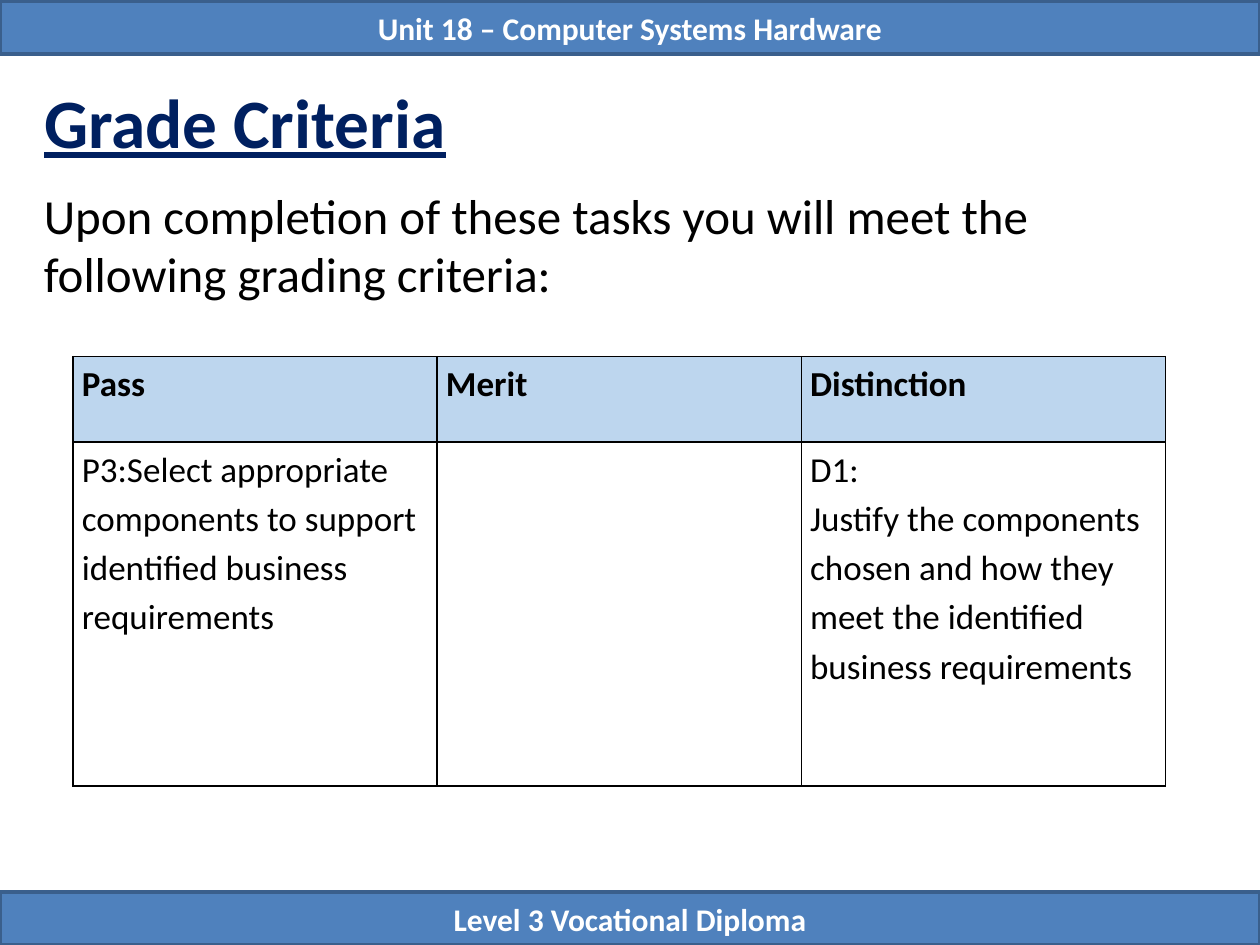
import pptx
import pptx.dml.color
import pptx.enum.shapes
import pptx.enum.text
import pptx.oxml
import pptx.oxml.ns
import pptx.util

Inches = pptx.util.Inches
Pt = pptx.util.Pt
ALIGN = pptx.enum.text.PP_ALIGN
MIDDLE = pptx.enum.text.MSO_ANCHOR.MIDDLE


def color(code):
    return pptx.dml.color.RGBColor.from_string(code)


def write(frame, text, size, ink="000000", bold=False, under=False,
          align=ALIGN.LEFT, space=None):
    """Fill the frame, one paragraph for each line of text."""
    frame.word_wrap = True
    frame.text = text
    for par in frame.paragraphs:
        par.alignment = align
        par.line_spacing = space
        for run in par.runs:
            font = run.font
            font.name = "Calibri"
            font.size = Pt(size)
            font.bold = bold
            font.underline = under
            font.color.rgb = color(ink)


def border(cell, ink="000000", width=1):
    props = cell._tc.get_or_add_tcPr()
    for index, side in enumerate(("lnL", "lnR", "lnT", "lnB")):
        props.insert(index, pptx.oxml.parse_xml(
            f'<a:{side} {pptx.oxml.ns.nsdecls("a")} w="{Pt(width)}">'
            f'<a:solidFill><a:srgbClr val="{ink}"/></a:solidFill></a:{side}>'))


class Deck:
    blue, edge, navy, pale = "4F81BD", "3A5F8C", "002060", "BDD6EE"

    def __init__(self):
        self.show = pptx.Presentation()
        self.show.slide_width = Inches(10)
        self.show.slide_height = Inches(7.5)
        self.slide = self.show.slides.add_slide(self.show.slide_layouts[5])
        self.shapes = self.slide.shapes

    def bar(self, text, top):
        rect = self.shapes.add_shape(
            pptx.enum.shapes.MSO_SHAPE.RECTANGLE,
            0, Inches(top), Inches(10), Inches(0.42))
        rect.shadow.inherit = False
        rect.fill.solid()
        rect.fill.fore_color.rgb = color(self.blue)
        rect.line.color.rgb = color(self.edge)
        rect.line.width = Pt(2)
        rect.text_frame.vertical_anchor = MIDDLE
        write(rect.text_frame, text, 18, "FFFFFF", bold=True,
              align=ALIGN.CENTER)

    def title(self, text):
        head = self.shapes.title
        head.left, head.top = Inches(0.25), Inches(0.58)
        head.width, head.height = Inches(9.5), Inches(0.75)
        head.text_frame.auto_size = pptx.enum.text.MSO_AUTO_SIZE.NONE
        head.text_frame.vertical_anchor = MIDDLE
        write(head.text_frame, text, 39.6, self.navy, bold=True, under=True)

    def body(self, text):
        box = self.shapes.add_textbox(
            Inches(0.25), Inches(1.42), Inches(9.5), Inches(5.45))
        write(box.text_frame, text, 28)

    def table(self, rows, heights):
        count = len(rows[0])
        grid = self.shapes.add_table(
            len(rows), count, Inches(0.58), Inches(2.83),
            Inches(2.89 * count), Inches(sum(heights))).table
        for r, (texts, height) in enumerate(zip(rows, heights)):
            grid.rows[r].height = Inches(height)
            for c, text in enumerate(texts):
                cell = grid.cell(r, c)
                cell.margin_left = cell.margin_right = Inches(0.07)
                cell.margin_top = cell.margin_bottom = 0
                if r == 0:
                    cell.fill.solid()
                    cell.fill.fore_color.rgb = color(self.pale)
                else:
                    cell.fill.background()
                border(cell)
                if text:
                    write(cell.text_frame, text, 20, bold=r == 0, space=1.15)


def main():
    deck = Deck()
    deck.bar("Level 3 Vocational Diploma", 7.08)
    deck.bar("Unit 18 – Computer Systems Hardware", 0.01)
    deck.title("Grade Criteria")
    deck.body("Upon completion of these tasks you will meet the "
              "following grading criteria:")
    deck.table([
        ["Pass", "Merit", "Distinction"],
        ["P3:Select appropriate components to support identified "
         "business requirements",
         "",
         "D1:\nJustify the components chosen and how they meet the "
         "identified business requirements"],
    ], [0.68, 2.73])
    deck.show.save("out.pptx")


if __name__ == "__main__":
    main()
